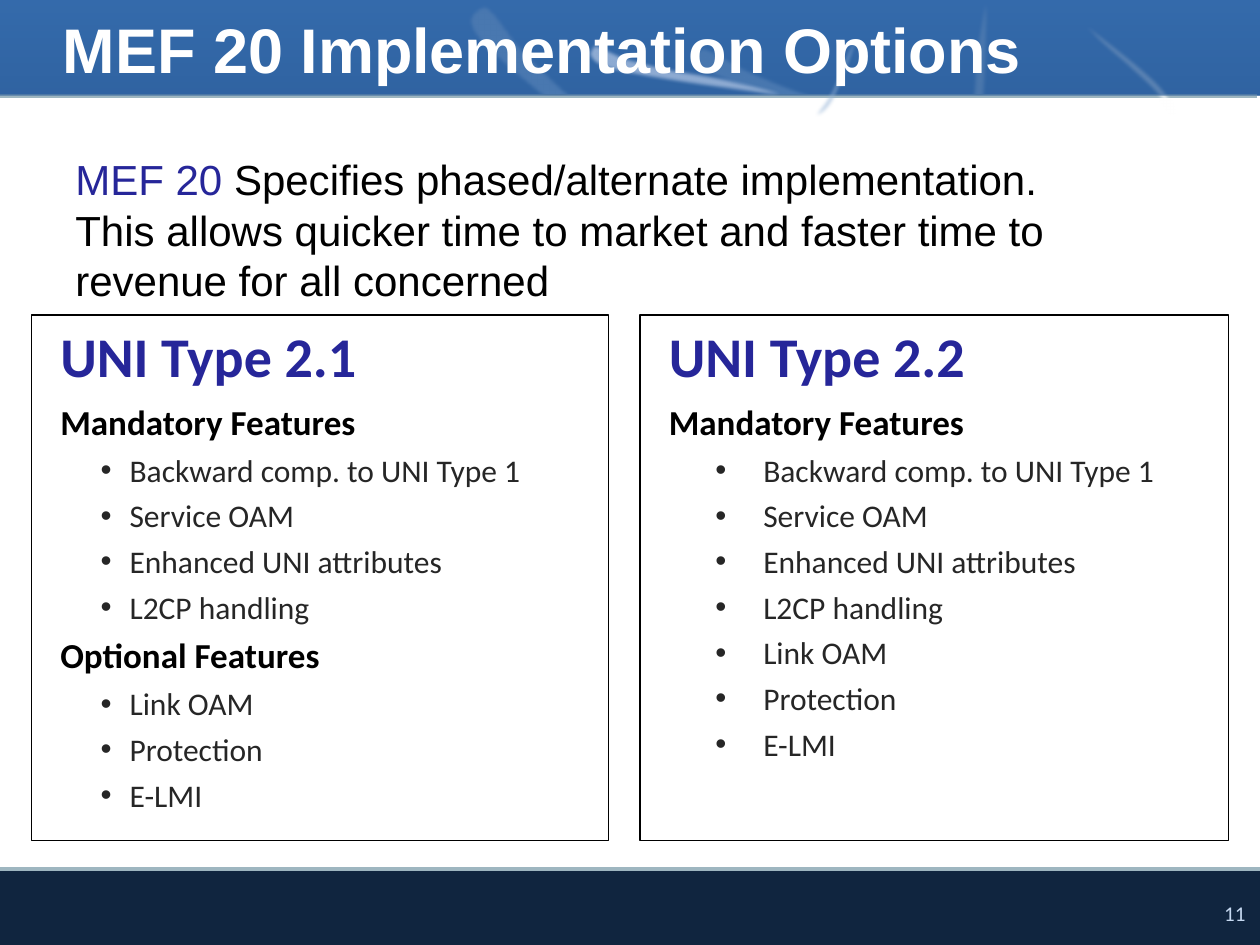
from copy import deepcopy

from lxml import etree
from pptx import Presentation
from pptx.dml.color import RGBColor
from pptx.enum.shapes import MSO_CONNECTOR, MSO_SHAPE
from pptx.enum.text import MSO_ANCHOR, PP_ALIGN
from pptx.oxml.ns import qn
from pptx.util import Inches, Pt

RECTANGLE = MSO_SHAPE.RECTANGLE
STRAIGHT = MSO_CONNECTOR.STRAIGHT
TOP, MIDDLE = MSO_ANCHOR.TOP, MSO_ANCHOR.MIDDLE
LEFT, CENTER = PP_ALIGN.LEFT, PP_ALIGN.CENTER

WHITE = RGBColor(0xFF, 0xFF, 0xFF)
BLACK = RGBColor(0x00, 0x00, 0x00)
INDIGO = RGBColor(0x26, 0x26, 0x99)
CHARCOAL = RGBColor(0x26, 0x26, 0x26)
SKY = RGBColor(0x54, 0x8E, 0xD5)
NAVY = RGBColor(0x10, 0x25, 0x3F)
DEEP_NAVY = RGBColor(0x0F, 0x24, 0x3E)
HEADER_TINT = RGBColor(0x25, 0x59, 0x97)
RULE_GREY = RGBColor(0x9E, 0xB6, 0xC0)
PALE_BLUE = RGBColor(0xC6, 0xD9, 0xF1)
SWOOSH_BLUE = RGBColor(0x94, 0xB8, 0xE4)
SWOOSH_PALE = RGBColor(0xC8, 0xD6, 0xF0)
SWOOSH_GREY = RGBColor(0x95, 0xB3, 0xD7)

HEADER_HEIGHT, FOOTER_TOP = 0.76, 6.9

# Rotation, colour, opacity, then a start point and Bezier triples (control, control, end).
SWOOSHES_BELOW_PANEL = [
    (298.7, WHITE, 42, [
        (7.65, 0.57), (7.74, 0.53), (7.85, 0.47), (7.98, 0.42), (8.1, 0.38), (8.35, 0.29),
        (8.38, 0.29), (8.42, 0.3), (8.36, 0.35), (8.19, 0.44), (8.02, 0.53), (7.54, 0.78),
        (7.37, 0.83), (7.19, 0.87), (7.14, 0.75), (7.15, 0.72), (7.15, 0.69), (7.32, 0.68),
        (7.4, 0.66), (7.48, 0.63), (7.55, 0.61), (7.65, 0.57)]),
    (0, SWOOSH_BLUE, 100, [
        (6.41, 0.72), (6.59, 0.79), (6.84, 0.86), (7.06, 0.94), (7.29, 1.03), (7.72, 1.2),
        (7.75, 1.23), (7.79, 1.27), (7.62, 1.24), (7.26, 1.14), (6.9, 1.03), (5.89, 0.73),
        (5.61, 0.6), (5.33, 0.47), (5.52, 0.36), (5.58, 0.36), (5.64, 0.35), (5.84, 0.49),
        (5.98, 0.55), (6.12, 0.61), (6.23, 0.66), (6.41, 0.72)]),
    (7.4, SWOOSH_BLUE, 100, [
        (4.5, 0.73), (4.67, 0.85), (4.9, 0.97), (5.1, 1.11), (5.3, 1.26), (5.69, 1.55),
        (5.72, 1.6), (5.74, 1.65), (5.58, 1.6), (5.25, 1.41), (4.93, 1.22), (4, 0.68),
        (3.75, 0.47), (3.5, 0.25), (3.7, 0.13), (3.76, 0.13), (3.83, 0.12), (3.99, 0.34),
        (4.11, 0.44), (4.24, 0.54), (4.34, 0.62), (4.5, 0.73)]),
]
SWOOSH_BELOW_TINT = (262, WHITE, 70, [
    (8.8, 0.56), (8.88, 0.5), (8.96, 0.42), (9.06, 0.34), (9.15, 0.27), (9.36, 0.12),
    (9.4, 0.1), (9.44, 0.09), (9.41, 0.14), (9.29, 0.26), (9.17, 0.37), (8.84, 0.71),
    (8.68, 0.81), (8.53, 0.91), (8.39, 0.87), (8.37, 0.86), (8.36, 0.84), (8.53, 0.76),
    (8.61, 0.71), (8.68, 0.66), (8.73, 0.62), (8.8, 0.56)])
SWOOSHES_ON_TOP = [
    (351.4, SWOOSH_PALE, 62, [
        (5.34, 0.51), (5.46, 0.55), (5.63, 0.6), (5.79, 0.66), (5.94, 0.72), (6.25, 0.85),
        (6.28, 0.88), (6.3, 0.91), (6.19, 0.9), (5.94, 0.83), (5.7, 0.76), (5, 0.56),
        (4.8, 0.46), (4.6, 0.36), (4.71, 0.24), (4.75, 0.22), (4.79, 0.21), (4.93, 0.33),
        (5.03, 0.38), (5.13, 0.42), (5.21, 0.46), (5.34, 0.51)]),
    (303.2, SWOOSH_GREY, 62, [
        (6.6, 0.5), (6.68, 0.49), (6.76, 0.46), (6.86, 0.45), (6.96, 0.44), (7.15, 0.42),
        (7.18, 0.43), (7.21, 0.44), (7.17, 0.47), (7.03, 0.5), (6.9, 0.53), (6.53, 0.63),
        (6.39, 0.63), (6.25, 0.63), (6.2, 0.54), (6.21, 0.52), (6.21, 0.5), (6.34, 0.52),
        (6.41, 0.52), (6.48, 0.52), (6.53, 0.51), (6.6, 0.5)]),
]

COMMON_FEATURES = ["Backward comp. to UNI Type 1", "Service OAM",
                   "Enhanced UNI attributes", "L2CP handling"]
EXTRA_FEATURES = ["Link OAM", "Protection", "E-LMI"]


def set_opacity(shape, percent):
    if percent < 100:
        color = shape.fill._xPr.find(qn("a:solidFill"))[0]
        etree.SubElement(color, qn("a:alpha"), val=str(percent * 1000))


def add_rectangle(slide, box, color=None):
    shape = slide.shapes.add_shape(RECTANGLE, *map(Inches, box))
    shape.shadow.inherit = False
    shape.line.fill.background()
    if color is None:
        shape.fill.background()
    else:
        shape.fill.solid()
        shape.fill.fore_color.rgb = color
    return shape


def add_rule(slide, left, top, width):
    rule = slide.shapes.add_connector(
        STRAIGHT, Inches(left), Inches(top), Inches(left + width), Inches(top))
    rule.line.color.rgb = RULE_GREY
    rule.line.width = Pt(2.25)
    etree.SubElement(rule.line._ln.getparent(), qn("a:effectLst"))


def bend_segments(shape):
    """Turn every three straight segments of a freeform into one Bezier curve."""
    segments = list(shape._element.iter(qn("a:lnTo")))
    for first in range(0, len(segments), 3):
        curve = etree.Element(qn("a:cubicBezTo"))
        segments[first].addprevious(curve)
        for segment in segments[first:first + 3]:
            curve.append(segment[0])
            segment.getparent().remove(segment)


def add_swoosh(slide, rotation, color, opacity, outline):
    points = [(Inches(x), Inches(y)) for x, y in outline]
    builder = slide.shapes.build_freeform(*points[0])
    builder.add_line_segments(points[1:], close=True)
    shape = builder.convert_to_shape()
    bend_segments(shape)
    shape.rotation = rotation
    shape.fill.solid()
    shape.fill.fore_color.rgb = color
    set_opacity(shape, opacity)
    shape.line.fill.background()
    shape.shadow.inherit = False
    effects = shape._element.spPr.find(qn("a:effectLst"))
    etree.SubElement(effects, qn("a:softEdge"), rad=str(Inches(0.03)))


def add_run(paragraph, text, size, color, font, bold=False):
    run = paragraph.add_run()
    run.text = text
    run.font.name, run.font.size, run.font.bold = font, Pt(size), bold
    run.font.color.rgb = color


def add_text(slide, box, runs, anchor=TOP, alignment=LEFT):
    """Place one paragraph of runs; None stands for a line break."""
    frame = slide.shapes.add_textbox(*map(Inches, box)).text_frame
    frame.word_wrap = True
    frame.vertical_anchor = anchor
    paragraph = frame.paragraphs[0]
    paragraph.alignment = alignment
    for run in runs:
        if run is None:
            paragraph.add_line_break()
        else:
            add_run(paragraph, *run)


def fill_with_gradient(shape):
    shape.fill.gradient()
    shape.fill.gradient_angle = 270
    stop_list = shape.fill._xPr.find(qn("a:gradFill")).find(qn("a:gsLst"))
    stop_list.insert(1, deepcopy(stop_list[0]))
    stops = zip(shape.fill.gradient_stops, (0, 0.5, 1), (SKY, NAVY, DEEP_NAVY))
    for stop, position, color in stops:
        stop.position = position
        stop.color.rgb = color


def add_backdrop(slide, width, height):
    fill_with_gradient(add_rectangle(slide, (0, 0, width, height), NAVY))
    for swoosh in SWOOSHES_BELOW_PANEL:
        add_swoosh(slide, *swoosh)
    add_rectangle(slide, (0, HEADER_HEIGHT, width, FOOTER_TOP - HEADER_HEIGHT), WHITE)
    add_rule(slide, -0.02, HEADER_HEIGHT, width)
    add_rule(slide, 0, FOOTER_TOP, width)
    add_swoosh(slide, *SWOOSH_BELOW_TINT)
    set_opacity(add_rectangle(slide, (0, 0, width, HEADER_HEIGHT), HEADER_TINT), 67)
    for swoosh in SWOOSHES_ON_TOP:
        add_swoosh(slide, *swoosh)


def format_paragraph(paragraph, margin, indent, before, bullet=False):
    """Set indents, spacing as a percentage of the line, and an optional bullet."""
    properties = paragraph._p.get_or_add_pPr()
    properties.set("marL", str(Inches(margin)))
    properties.set("indent", str(Inches(indent)))
    for tag, percent in (("a:spcBef", before), ("a:spcAft", 15)):
        spacing = etree.SubElement(properties, qn(tag))
        etree.SubElement(spacing, qn("a:spcPct"), val=str(percent * 1000))
    if bullet:
        etree.SubElement(properties, qn("a:buFont"), typeface="Arial")
        etree.SubElement(properties, qn("a:buChar"), char="•")


def add_feature_panel(slide, box, heading, sections, margin, indent):
    panel = add_rectangle(slide, box)
    panel.line.color.rgb = BLACK
    panel.line.width = Pt(0.75)
    frame = panel.text_frame
    frame.word_wrap = True
    frame.vertical_anchor = TOP
    lines = [(heading, 32, INDIGO, False)]
    for title, features in sections:
        lines.append((title, 20, BLACK, False))
        lines += [(feature, 18, CHARCOAL, True) for feature in features]
    for index, (text, size, color, bullet) in enumerate(lines):
        paragraph = frame.add_paragraph() if index else frame.paragraphs[0]
        paragraph.alignment = LEFT
        position = (margin, indent) if bullet else (0.12, 0.01)
        format_paragraph(paragraph, *position, 10 if index else 0, bullet)
        add_run(paragraph, text, size, color, "Calibri", not bullet)


def main():
    presentation = Presentation()
    presentation.slide_width, presentation.slide_height = Inches(10), Inches(7.5)
    slide = presentation.slides.add_slide(presentation.slide_layouts[6])
    add_backdrop(slide, 10, 7.5)
    add_text(slide, (9.6, 7.1, 0.4, 0.3), [("11", 12, PALE_BLUE, "Calibri")], TOP, CENTER)
    add_text(slide, (0.4, 0, 9.17, HEADER_HEIGHT),
             [("MEF 20 Implementation Options", 36, WHITE, "Arial", True)], MIDDLE)
    add_text(slide, (0.5, 1.17, 9, 1.25), [
        ("MEF 20 ", 24, INDIGO, "Arial"),
        ("Specifies phased/alternate implementation.", 24, BLACK, "Arial"),
        None,
        ("This allows quicker time to market and faster time to revenue for all concerned",
         24, BLACK, "Arial")])
    add_feature_panel(slide, (0.25, 2.5, 4.58, 4.17), "UNI Type 2.1",
                      [("Mandatory Features", COMMON_FEATURES),
                       ("Optional Features", EXTRA_FEATURES)], 0.68, -0.23)
    add_feature_panel(slide, (5.08, 2.5, 4.67, 4.17), "UNI Type 2.2",
                      [("Mandatory Features", COMMON_FEATURES + EXTRA_FEATURES)], 0.88, -0.38)
    presentation.save("out.pptx")


if __name__ == "__main__":
    main()
